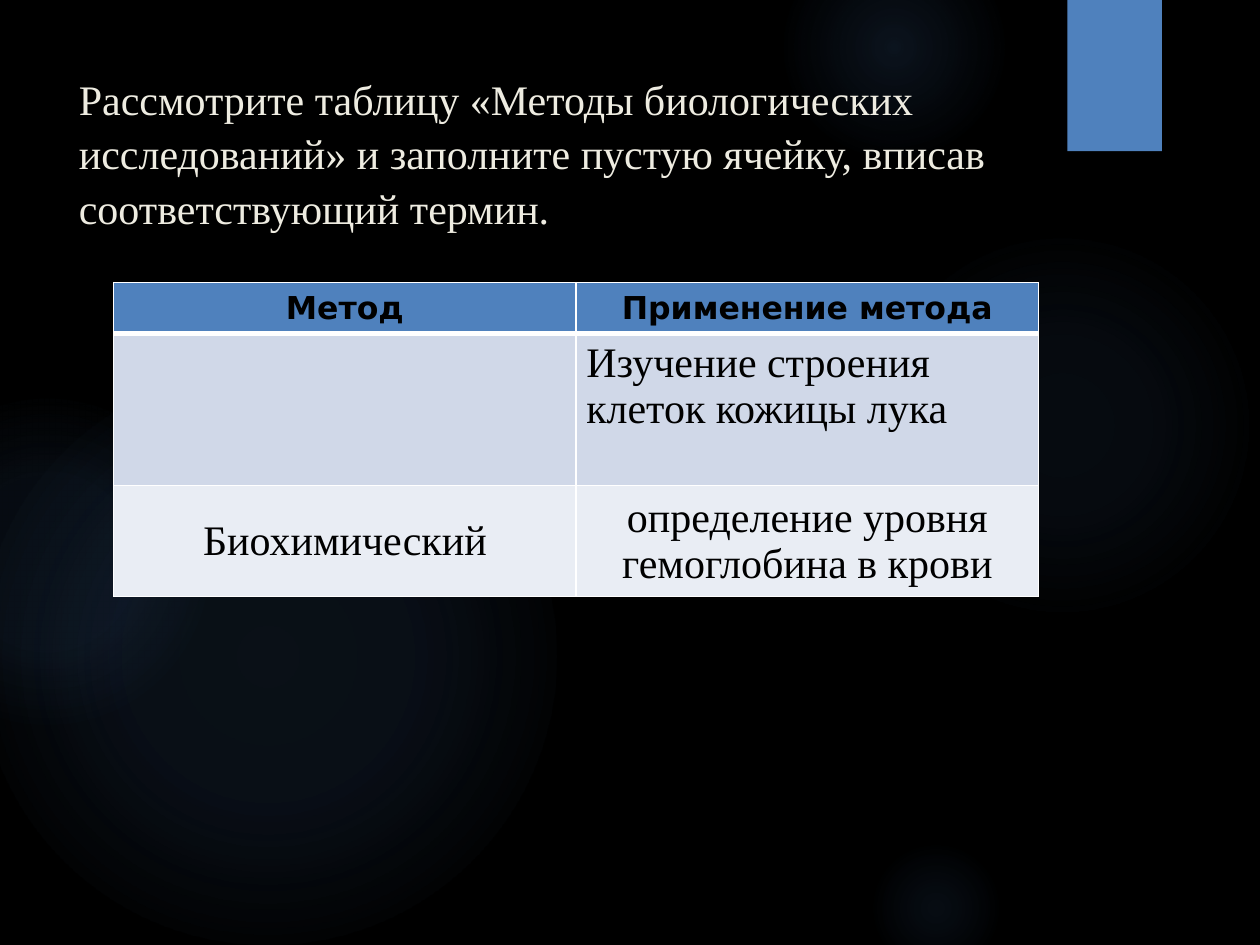
from lxml import etree
from pptx import Presentation
from pptx.dml.color import RGBColor
from pptx.enum.shapes import MSO_SHAPE as Preset
from pptx.enum.text import MSO_ANCHOR as Anchor, PP_ALIGN as Align
from pptx.oxml import parse_xml
from pptx.oxml.ns import nsdecls, qn
from pptx.util import Pt

COLORS = {
    "background": "000000", "glow": "558ED5", "accent": "4F81BD",
    "title": "EEECE1", "text": "000000", "border": "FFFFFF",
    "band_dark": "D0D8E8", "band_light": "E9EDF4",
}
SERIF, SANS = "Times New Roman", "DejaVu Sans"

# left, top, diameter, then (position %, opacity %) stops from the centre out
GLOWS = [
    (496, 132, 222, [(0, 7), (36, 6), (69, 0)]),
    (448, -36, 126, [(0, 14), (36, 7), (73, 0)]),
    (496, 480, 78, [(0, 9), (36, 5), (66, 0)]),
    (-12, 210, 330, [(0, 11), (36, 10), (75, 0)]),
    (-66, 228, 186, [(0, 8), (36, 8), (72, 0)]),
]
METHODS = [
    ("Метод", "Применение метода"),
    ("", "Изучение строения клеток кожицы лука"),
    ("Биохимический", "определение уровня гемоглобина в крови"),
]


def rgb(name):
    return RGBColor.from_string(COLORS[name])


def write(frame, text, size=24, font=SERIF, color="text", bold=False,
          align=Align.LEFT, spacing=None):
    paragraph = frame.paragraphs[0]
    paragraph.alignment = align
    paragraph.line_spacing = spacing
    run = paragraph.add_run()
    run.text = text
    run.font.size, run.font.name, run.font.bold = Pt(size), font, bold
    run.font.color.rgb = rgb(color)


def add_plain_shape(slide, preset, left, top, width, height):
    shape = slide.shapes.add_shape(preset, Pt(left), Pt(top), Pt(width), Pt(height))
    shape.shadow.inherit = False
    shape.line.fill.background()
    return shape


def add_glow(slide, left, top, diameter, stops):
    """Circle whose radial gradient fades to transparent."""
    circle = add_plain_shape(slide, Preset.OVAL, left, top, diameter, diameter)
    stop_xml = "".join(
        f'<a:gs pos="{position * 1000}"><a:srgbClr val="{COLORS["glow"]}">'
        f'<a:alpha val="{opacity * 1000}"/></a:srgbClr></a:gs>'
        for position, opacity in stops)
    gradient = parse_xml(
        f'<a:gradFill {nsdecls("a")} rotWithShape="1"><a:gsLst>{stop_xml}</a:gsLst>'
        '<a:path path="circle"><a:fillToRect l="50000" t="50000" r="50000" b="50000"/>'
        '</a:path></a:gradFill>')
    circle._element.spPr.find(qn("a:prstGeom")).addnext(gradient)


def add_backdrop(slide):
    slide.background.fill.solid()
    slide.background.fill.fore_color.rgb = rgb("background")
    for glow in GLOWS:
        add_glow(slide, *glow)
    tab = add_plain_shape(slide, Preset.RECTANGLE, 610, 0, 54, 86.4)
    tab.fill.solid()
    tab.fill.fore_color.rgb = rgb("accent")


def add_title(slide, left, top, width, height):
    frame = slide.shapes.add_textbox(Pt(left), Pt(top), Pt(width), Pt(height)).text_frame
    frame.word_wrap = True
    write(frame, "Рассмотрите таблицу «Методы биологических исследований» "
                 "и заполните пустую ячейку, вписав соответствующий термин.",
          color="title", spacing=1.08)


def set_borders(cell, bottom):
    properties = cell._tc.get_or_add_tcPr()
    sides = [("lnL", 1), ("lnR", 1), ("lnT", 1), ("lnB", bottom)]
    for index, (side, width) in enumerate(sides):
        line = etree.Element(qn(f"a:{side}"), w=str(Pt(width)))
        fill = etree.SubElement(line, qn("a:solidFill"))
        etree.SubElement(fill, qn("a:srgbClr"), val=COLORS["border"])
        properties.insert(index, line)


def add_methods_table(slide, left, top, width, row_heights):
    table = slide.shapes.add_table(
        len(METHODS), 2, Pt(left), Pt(top), Pt(width), Pt(sum(row_heights))).table
    for column in table.columns:
        column.width = Pt(width / 2)
    fills = ["accent", "band_dark", "band_light"]
    for r, (texts, height, fill) in enumerate(zip(METHODS, row_heights, fills)):
        table.rows[r].height = Pt(height)
        header, centred = r == 0, r != 1
        for c, text in enumerate(texts):
            cell = table.cell(r, c)
            cell.fill.solid()
            cell.fill.fore_color.rgb = rgb(fill)
            side, edge = (2.2, 2.9) if centred else (5.8, 3.6)
            cell.margin_left = cell.margin_right = Pt(side)
            cell.margin_top = cell.margin_bottom = Pt(edge)
            cell.vertical_anchor = Anchor.MIDDLE if centred else Anchor.TOP
            set_borders(cell, bottom=3 if header else 1)
            if text:
                write(cell.text_frame, text, bold=header,
                      size=18 if header else 24, font=SANS if header else SERIF,
                      align=Align.CENTER if centred else Align.LEFT)


def main():
    deck = Presentation()
    deck.slide_width, deck.slide_height = Pt(720), Pt(540)
    slide = deck.slides.add_slide(deck.slide_layouts[6])
    add_backdrop(slide)
    add_title(slide, 38, 36, 556, 110)
    add_methods_table(slide, 65, 161.5, 528.5, [29.2, 86.8, 59])
    deck.save("out.pptx")


if __name__ == "__main__":
    main()
